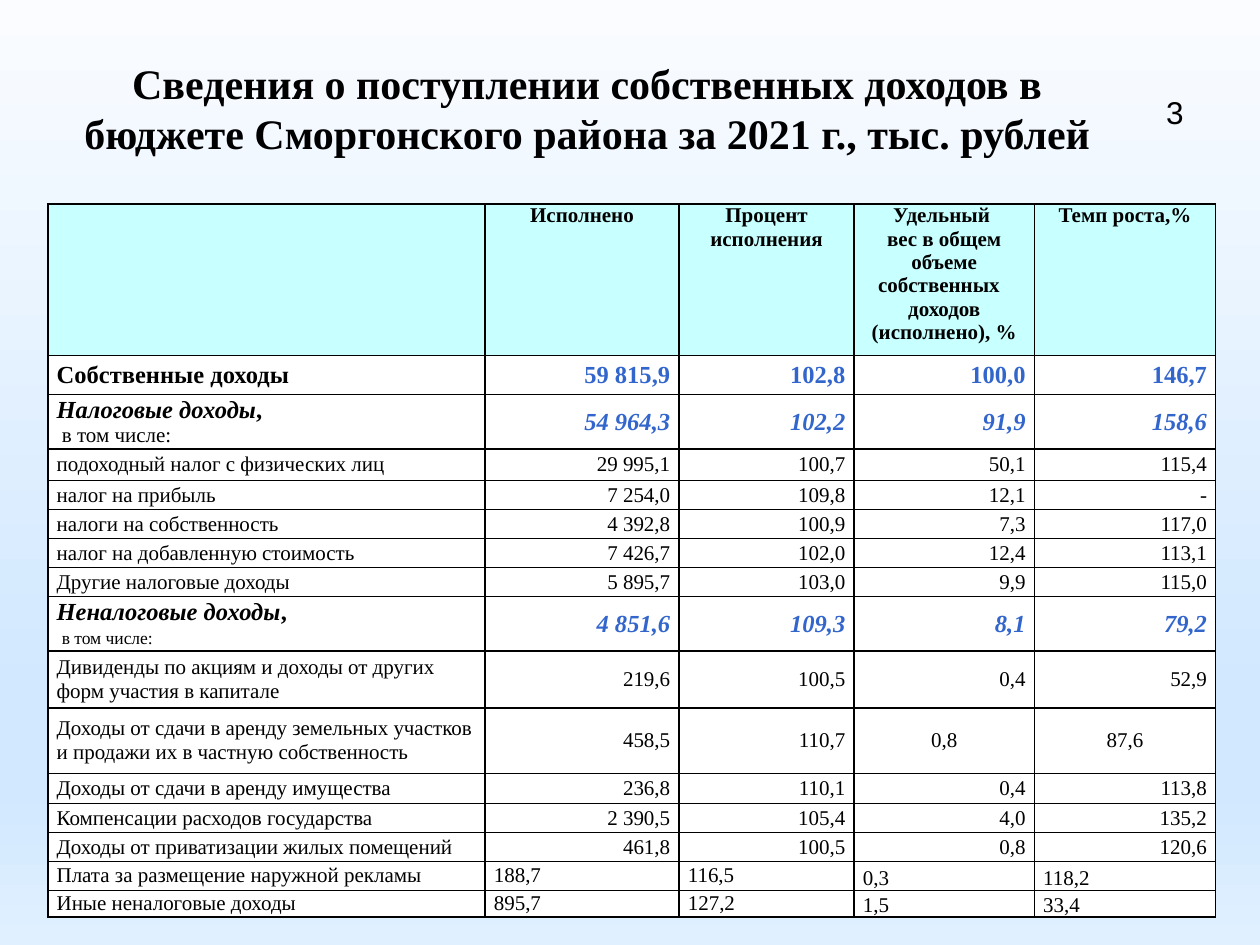
"""Build the slide on own revenues of the district budget."""
from copy import deepcopy
from dataclasses import dataclass, field

from pptx import Presentation
from pptx import util as u
from pptx.dml import color as dml
from pptx.enum import text
from pptx.oxml import parse_xml
from pptx.oxml import ns

SERIF, SANS = "Times New Roman", "Arial"
BLACK, BLUE, WHITE, CYAN = "000000", "3366CC", "FFFFFF", "C8FFFF"
LEFT, CENTER, RIGHT = text.PP_ALIGN.LEFT, text.PP_ALIGN.CENTER, text.PP_ALIGN.RIGHT
TOP, MIDDLE, BOTTOM = text.MSO_ANCHOR.TOP, text.MSO_ANCHOR.MIDDLE, text.MSO_ANCHOR.BOTTOM
BACKGROUND_STOPS = [(0, "FAFCFF"), (0.74, "D1E8FF"), (0.83, "D1E8FF"), (1, "E0F0FF")]
COLUMN_WIDTHS = [3.47, 1.54, 1.39, 1.43, 1.44]
HEADER_HEIGHT = 1.17


@dataclass(frozen=True)
class Style:
    size: int = 12
    color: str = BLACK
    bold: bool = False
    italic: bool = False
    font: str = SERIF


PLAIN = Style()
BOLD = Style(bold=True)
TOTAL = Style(14, BLACK, True)
TOTAL_VALUE = Style(14, BLUE, True)
GROUP = Style(14, BLACK, True, True)
GROUP_VALUE = Style(14, BLUE, True, True)

Paragraphs = list[list[tuple[str, Style]]]


@dataclass
class RevenueRow:
    height: float
    label: Paragraphs
    values: list[str]
    style: Style = PLAIN
    alignments: list = field(default_factory=lambda: [RIGHT] * 4)
    anchors: list = field(default_factory=lambda: [MIDDLE] * 4)


def item(height: float, label: str, values: str, **options) -> RevenueRow:
    return RevenueRow(height, [[(label, PLAIN)]], values.split("|"), **options)


def group(label: str, note_size: int, values: str) -> RevenueRow:
    paragraphs = [[(label, GROUP), (",", TOTAL)],
                  [(" ", BOLD), ("в том числе:", Style(note_size))]]
    return RevenueRow(0.42, paragraphs, values.split("|"), GROUP_VALUE)


LAST_ROWS = {"alignments": [LEFT] * 4, "anchors": [MIDDLE, MIDDLE, BOTTOM, BOTTOM]}
HEADERS = [[], ["Исполнено"], ["Процент исполнения"],
           ["Удельный ", "вес в общем объеме собственных  ", "доходов (исполнено), %"],
           ["Темп роста,%"]]
ROWS = [
    RevenueRow(0.31, [[("Собственные доходы", TOTAL)]],
               ["59 815,9", "102,8", "100,0", "146,7"], TOTAL_VALUE),
    group("Налоговые доходы", 12, "54 964,3|102,2|91,9|158,6"),
    item(0.25, "подоходный налог с физических лиц", "29 995,1|100,7|50,1|115,4"),
    item(0.23, "налог на прибыль", "7 254,0|109,8|12,1|-"),
    item(0.23, "налоги на собственность", "4 392,8|100,9|7,3|117,0"),
    item(0.23, "налог на добавленную стоимость ", "7 426,7|102,0|12,4|113,1"),
    item(0.23, "Другие налоговые доходы", "5 895,7|103,0|9,9|115,0"),
    group("Неналоговые доходы", 10, "4 851,6|109,3|8,1|79,2"),
    item(0.45, "Дивиденды по акциям и доходы от других форм участия в капитале",
         "219,6|100,5|0,4|52,9"),
    item(0.52, "Доходы от сдачи в аренду земельных участков и продажи их в частную собственность",
         "458,5|110,7|0,8|87,6", alignments=[RIGHT, RIGHT, CENTER, CENTER]),
    item(0.24, "Доходы от сдачи в аренду имущества", "236,8|110,1|0,4|113,8"),
    item(0.23, "Компенсации расходов государства", "2 390,5|105,4|4,0|135,2"),
    item(0.23, "Доходы от приватизации жилых помещений ", "461,8|100,5|0,8|120,6"),
    item(0.23, "Плата за размещение наружной рекламы", "188,7|116,5|0,3|118,2", **LAST_ROWS),
    item(0.21, "Иные неналоговые доходы", "895,7|127,2|1,5|33,4", **LAST_ROWS),
]


def rgb(value: str) -> dml.RGBColor:
    return dml.RGBColor.from_string(value)


def set_attributes(target, values: dict) -> None:
    for name, value in values.items():
        setattr(target, name, value)


def write_paragraphs(frame, paragraphs: Paragraphs, alignment) -> None:
    for index, runs in enumerate(paragraphs):
        paragraph = frame.add_paragraph() if index else frame.paragraphs[0]
        paragraph.alignment = alignment
        for content, style in runs:
            run = paragraph.add_run()
            run.text = content
            set_attributes(run.font, {"name": style.font, "size": u.Pt(style.size),
                                      "bold": style.bold, "italic": style.italic})
            run.font.color.rgb = rgb(style.color)


def add_borders(cell) -> None:
    properties = cell._tc.get_or_add_tcPr()
    for index, side in enumerate(("lnL", "lnR", "lnT", "lnB")):
        properties.insert(index, parse_xml(
            f'<a:{side} {ns.nsdecls("a")} w="{u.Pt(1)}"><a:solidFill>'
            f'<a:srgbClr val="{BLACK}"/></a:solidFill></a:{side}>'))


def fill_cell(cell, paragraphs: Paragraphs, fill: str, alignment, anchor) -> None:
    set_attributes(cell, {"margin_left": u.Inches(0.07), "margin_right": u.Inches(0.07),
                          "margin_top": 0, "margin_bottom": 0, "vertical_anchor": anchor})
    cell.fill.solid()
    cell.fill.fore_color.rgb = rgb(fill)
    add_borders(cell)
    write_paragraphs(cell.text_frame, paragraphs, alignment)


def add_text(slide, box: tuple, content: str, style: Style, anchor) -> None:
    frame = slide.shapes.add_textbox(*map(u.Inches, box)).text_frame
    set_attributes(frame, {"word_wrap": True, "vertical_anchor": anchor})
    write_paragraphs(frame, [[(content, style)]], CENTER)


def paint_background(slide) -> None:
    fill = slide.background.fill
    fill.gradient()
    fill.gradient_angle = 270
    stop_list = slide.element.find(f'.//{ns.qn("a:gsLst")}')
    while len(stop_list) < len(BACKGROUND_STOPS):
        stop_list.append(deepcopy(stop_list[0]))
    for stop, (position, color) in zip(fill.gradient_stops, BACKGROUND_STOPS):
        stop.position = position
        stop.color.rgb = rgb(color)


def add_revenue_table(slide) -> None:
    heights = [HEADER_HEIGHT] + [row.height for row in ROWS]
    table = slide.shapes.add_table(
        len(heights), len(COLUMN_WIDTHS), u.Inches(0.38), u.Inches(1.62),
        u.Inches(sum(COLUMN_WIDTHS)), u.Inches(sum(heights))).table
    set_attributes(table, {"first_row": False, "horz_banding": False})
    for column, width in zip(table.columns, COLUMN_WIDTHS):
        column.width = u.Inches(width)
    for table_row, height in zip(table.rows, heights):
        table_row.height = u.Inches(height)
    for column, lines in enumerate(HEADERS):
        paragraphs = [[(line, BOLD)] for line in lines]
        fill_cell(table.cell(0, column), paragraphs, CYAN, CENTER, TOP)
    for index, row in enumerate(ROWS, 1):
        fill_cell(table.cell(index, 0), row.label, WHITE, LEFT, MIDDLE)
        cells = zip(row.values, row.alignments, row.anchors)
        for column, (value, alignment, anchor) in enumerate(cells, 1):
            fill_cell(table.cell(index, column), [[(value, row.style)]],
                      WHITE, alignment, anchor)


def main() -> None:
    presentation = Presentation()
    set_attributes(presentation, {"slide_width": u.Inches(10), "slide_height": u.Inches(7.5)})
    slide = presentation.slides.add_slide(presentation.slide_layouts[6])
    paint_background(slide)
    add_text(slide, (0.38, 0.4, 8.56, 0.91),
             "Сведения о поступлении собственных доходов в бюджете "
             "Сморгонского района за 2021 г., тыс. рублей",
             Style(24, bold=True), MIDDLE)
    add_revenue_table(slide)
    add_text(slide, (8.94, 0.69, 0.77, 0.4), "3", Style(18, font=SANS), TOP)
    presentation.save("out.pptx")


if __name__ == "__main__":
    main()
